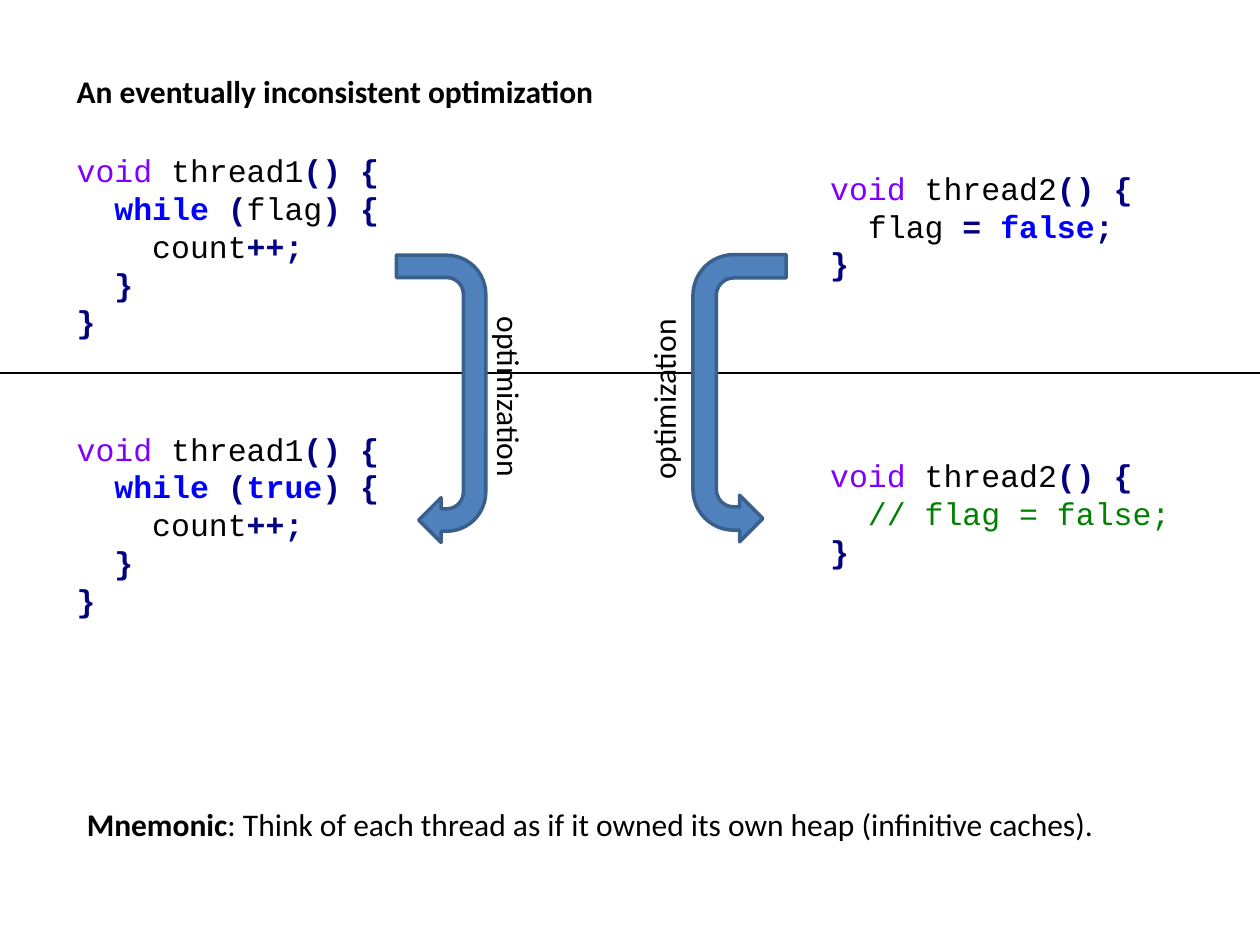
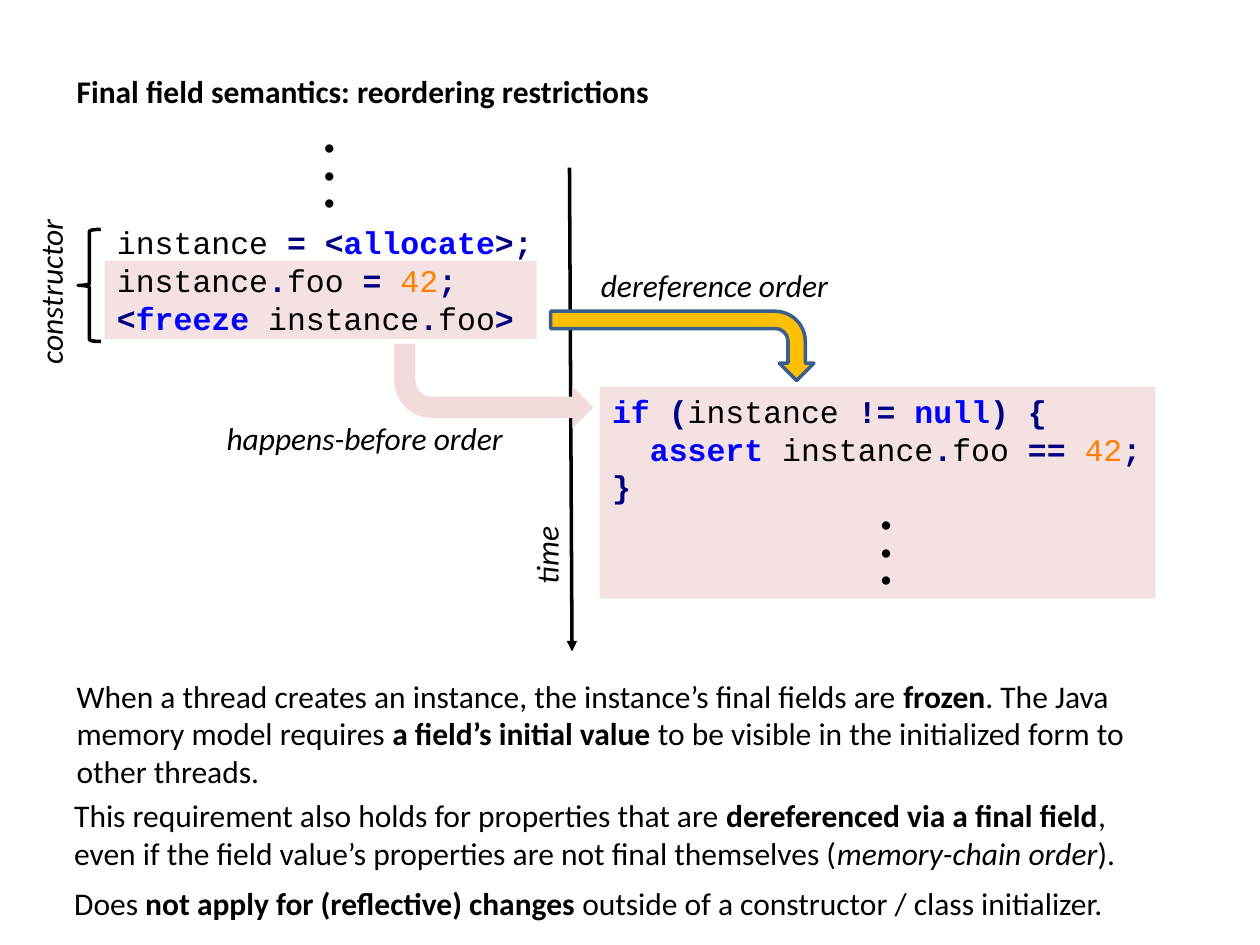
"""Build two slides on the Java memory model: optimization and final fields."""
import dataclasses
import itertools

import lxml.etree
import pptx
import pptx.dml.color
import pptx.enum.shapes
import pptx.enum.text
import pptx.oxml.ns
import pptx.util

PX = 9144
SHAPE = pptx.enum.shapes.MSO_SHAPE
ALIGN = pptx.enum.text.PP_ALIGN
qn = pptx.oxml.ns.qn


@dataclasses.dataclass(frozen=True)
class Theme:
    sans: str = "Calibri"
    mono: str = "Courier New"
    body: int = 18
    dots: int = 32
    ink: str = "000000"
    type_name: str = "8000FF"
    keyword: str = "0000FF"
    operator: str = "000080"
    number: str = "FF8000"
    comment: str = "008000"
    blue: str = "4F81BD"
    outline: str = "3A5F8C"
    rose: str = "E6B9B8"
    pale_rose: str = "F2DCDB"
    gold: str = "FFC000"
    rose_alpha: int = 42
    code_indent: int = 30
    keywords: tuple = ("while", "true", "false", "if", "null", "assert", "allocate", "freeze")


def rgb(color):
    return pptx.dml.color.RGBColor.from_string(color)


class Deck:
    def __init__(self, theme, width, height):
        self.theme = theme
        self.prs = pptx.Presentation()
        self.prs.slide_width = width * PX
        self.prs.slide_height = height * PX
        self.s = None

    def slide(self, title, width):
        self.s = self.prs.slides.add_slide(self.prs.slide_layouts[6])
        self.text((51, 52, width, 40), [f"*{title}*"])

    def frame(self, box, wrap, rot=0):
        sp = self.s.shapes.add_textbox(*(v * PX for v in box))
        sp.rotation = rot
        tf = sp.text_frame
        tf.word_wrap = wrap
        tf.auto_size = pptx.enum.text.MSO_AUTO_SIZE.SHAPE_TO_FIT_TEXT
        return tf

    def paragraphs(self, tf, lines):
        for i, line in enumerate(lines):
            yield tf.add_paragraph() if i else tf.paragraphs[0], line

    def run(self, p, text, font, color, size, bold=False, italic=False):
        r = p.add_run()
        r.text = text
        r.font.name = font
        r.font.size = pptx.util.Pt(size)
        r.font.color.rgb = rgb(color)
        r.font.bold = bold
        r.font.italic = italic

    def text(self, box, lines, rot=0, size=None, align=None, wrap=False):
        t = self.theme
        for p, line in self.paragraphs(self.frame(box, wrap, rot), lines):
            p.alignment = align
            for i, part in enumerate(line.split("*")):
                for j, piece in enumerate(part.split("_")):
                    if piece:
                        self.run(p, piece, t.sans, t.ink, size or t.body, i % 2 == 1, j % 2 == 1)

    def token_style(self, token):
        t = self.theme
        if token.startswith("//"):
            return t.comment, False
        if token == "void":
            return t.type_name, False
        if token in t.keywords:
            return t.keyword, True
        if token.isdigit():
            return t.number, False
        return (t.ink, False) if token.isalnum() else (t.operator, True)

    def code(self, box, lines):
        t = self.theme
        depth = 0
        for p, line in self.paragraphs(self.frame(box, True), lines):
            depth -= line.startswith("}")
            if depth:
                p._p.get_or_add_pPr().set("marL", str(depth * t.code_indent * PX))
            depth += line.endswith("{")
            if line.startswith("//"):
                tokens = [line]
            else:
                tokens = ["".join(g) for _, g in itertools.groupby(line, str.isalnum)]
            for token in tokens:
                color, bold = self.token_style(token)
                self.run(p, token, t.mono, color, t.body, bold)

    def shape(self, kind, box, fill=None, line=None, rot=0, flip=False, alpha=None):
        sp = self.s.shapes.add_shape(kind, *(v * PX for v in box))
        sp.shadow.inherit = False
        sp.rotation = rot
        if fill:
            sp.fill.solid()
            sp.fill.fore_color.rgb = rgb(fill)
        else:
            sp.fill.background()
        if line:
            sp.line.color.rgb = rgb(line)
            sp.line.width = pptx.util.Pt(2)
        else:
            sp.line.fill.background()
        sp_pr = sp._element.spPr
        if flip:
            sp_pr.find(qn("a:xfrm")).set("flipV", "1")
        if alpha:
            clr = sp_pr.find(qn("a:solidFill")).find(qn("a:srgbClr"))
            lxml.etree.SubElement(clr, qn("a:alpha"), val=str(alpha * 1000))

    def line(self, start, end, width, arrow=False):
        kind = pptx.enum.shapes.MSO_CONNECTOR.STRAIGHT
        c = self.s.shapes.add_connector(kind, *(v * PX for v in start + end))
        c.line.color.rgb = rgb(self.theme.ink)
        c.line.width = pptx.util.Pt(width)
        sp_pr = c._element.spPr
        if arrow:
            lxml.etree.SubElement(sp_pr.find(qn("a:ln")), qn("a:tailEnd"), type="triangle")
        lxml.etree.SubElement(sp_pr, qn("a:effectLst"))

    def panel(self, box):
        self.shape(SHAPE.RECTANGLE, box, self.theme.rose, alpha=self.theme.rose_alpha)

    def dots(self, x, y):
        self.text((x, y, 76, 64), ["*. . .*"], rot=270, size=self.theme.dots)


def optimization_slide(deck):
    t = deck.theme
    deck.slide("An eventually inconsistent optimization", 433)
    for y, condition in ((115, "flag"), (336, "true")):
        deck.code((51, y, 315, 162),
                  ["void thread1() {", f"while ({condition}) {{", "count++;", "}", "}"])
    deck.line((-10, 296), (1022, 296), 1.5)
    for y, statement in ((129, "flag = false;"), (357, "// flag = false;")):
        deck.code((649, y, 315, 101), ["void thread2() {", statement, "}"])
    for arrow, label_x, label_rot, flip in (
        ((236, 281, 228, 71), 330, 90, False),
        ((473, 279, 228, 74), 452, 270, True),
    ):
        deck.shape(SHAPE.U_TURN_ARROW, arrow, t.blue, t.outline, rot=90, flip=flip)
        deck.text((label_x, 296, 149, 40), ["optimization"], rot=label_rot)
    deck.text((59, 634, 829, 40), [
        "*Mnemonic*: Think of each thread as if it owned its own heap (infinitive caches)."])


def final_field_slide(deck):
    t = deck.theme
    deck.slide("Final field semantics: reordering restrictions", 478)
    deck.panel((83, 207, 343, 62))
    deck.code((83, 172, 366, 101),
              ["instance = <allocate>;", "instance.foo = 42;", "<freeze instance.foo>"])
    deck.panel((476, 307, 441, 168))
    deck.code((476, 306, 457, 101),
              ["if (instance != null) {", "assert instance.foo == 42;", "}"])
    deck.line((452, 133), (454, 517), 2, arrow=True)
    deck.text((400, 420, 67, 40), ["_time_"], rot=270)
    deck.dots(209, 108)
    deck.dots(651, 407)
    deck.shape(SHAPE.BENT_ARROW, (313, 273, 158, 67), t.pale_rose, flip=True)
    deck.text((167, 328, 242, 40), ["_happens-before order_"], align=ALIGN.RIGHT, wrap=True)
    deck.shape(SHAPE.BENT_ARROW, (514, 170, 55, 209), t.gold, t.outline, rot=90)
    deck.text((467, 206, 202, 40), ["_dereference order_"])
    deck.shape(SHAPE.LEFT_BRACE, (62, 182, 18, 89), line=t.ink)
    deck.text((-29, 210, 138, 40), ["_constructor_"], rot=270)
    deck.text((51, 532, 856, 101), [
        "When a thread creates an instance, the instance’s final fields are *frozen*. The Java",
        "memory model requires *a field’s initial value* to be visible in the initialized form to",
        "other threads."])
    deck.text((49, 627, 858, 71), [
        "This requirement also holds for properties that are *dereferenced via a final field*,",
        "even if the field value’s properties are not final themselves (_memory-chain order_)."])
    deck.text((49, 697, 845, 40), [
        "Does *not apply for (reflective) changes* outside of a constructor / class initializer."])


def main():
    deck = Deck(Theme(), 1000, 750)
    optimization_slide(deck)
    final_field_slide(deck)
    deck.prs.save("out.pptx")


if __name__ == "__main__":
    main()
